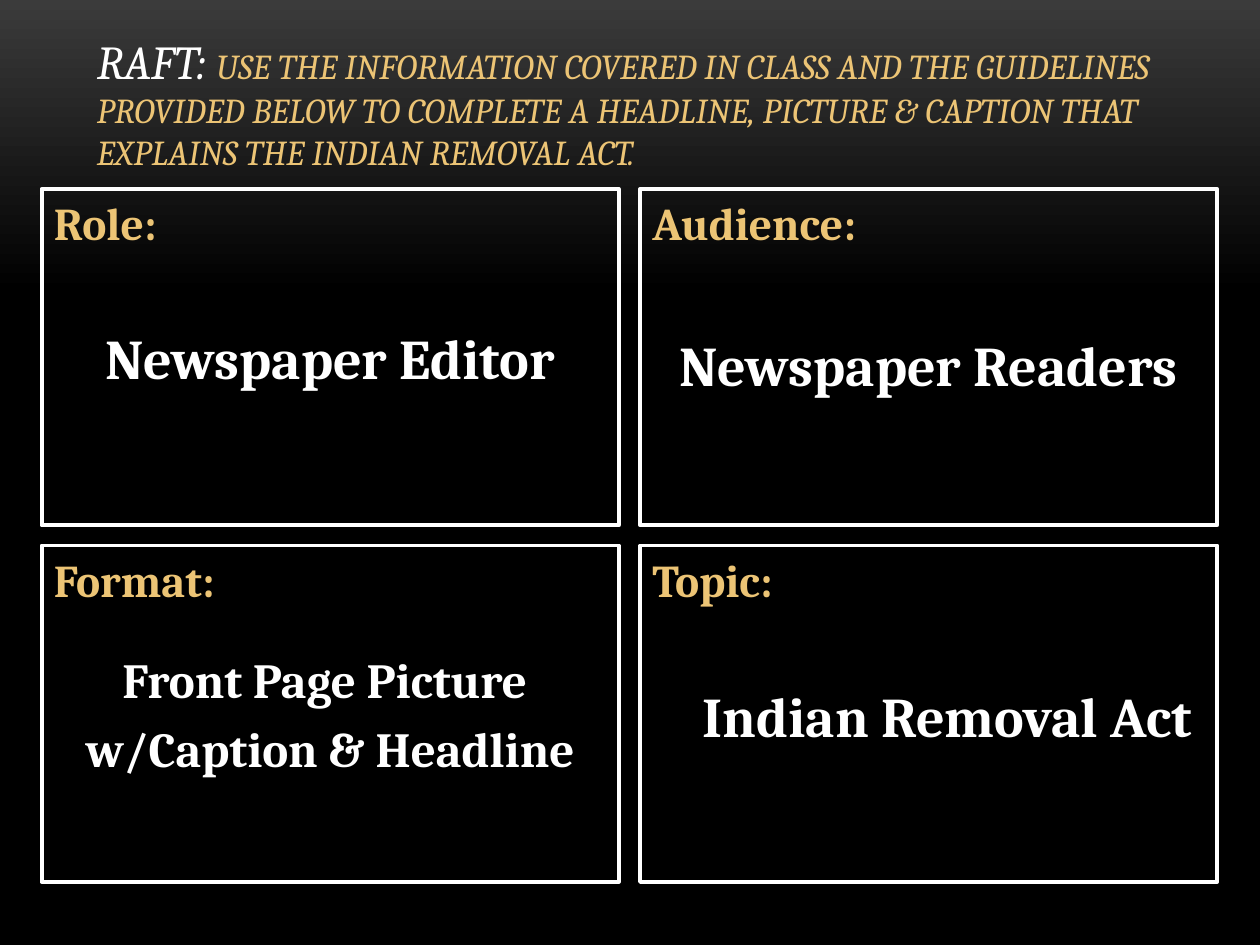
from dataclasses import dataclass

import pptx
import pptx.dml.color
import pptx.enum.shapes
import pptx.enum.text
import pptx.util

Inches = pptx.util.Inches
Pt = pptx.util.Pt
RGB = pptx.dml.color.RGBColor
Align = pptx.enum.text.PP_ALIGN
Anchor = pptx.enum.text.MSO_ANCHOR


@dataclass(frozen=True)
class Theme:
    font: str = "Cambria"
    white: RGB = RGB(0xFF, 0xFF, 0xFF)
    gold: RGB = RGB(0xEC, 0xC4, 0x75)
    gray: RGB = RGB(0x3B, 0x3B, 0x3B)
    black: RGB = RGB(0, 0, 0)
    title: float = 27
    task: float = 20
    label: float = 26
    border: float = 2.25


@dataclass(frozen=True)
class Card:
    label: str
    lines: tuple[str, ...]
    size: float
    gap: float  # points between the label and the first line
    shift: float = 0  # left margin of the lines, inches


THEME = Theme()
CARDS = (
    Card("Role:", ("Newspaper Editor",), 32, 42),
    Card("Audience:", ("Newspaper Readers",), 32, 46),
    Card("Format:", ("Front Page Picture ", "w/Caption & Headline"), 28, 24.5),
    Card("Topic:", ("Indian Removal Act",), 32, 43, 0.3),
)
LEFT, TOP = 0.33, 1.5
WIDTH, HEIGHT = 4.58, 2.67
STEP_X, STEP_Y = 4.75, 2.83


def add_run(para, text: str, size: float, color: RGB,
            bold: bool = False, italic: bool = False) -> None:
    run = para.add_run()
    run.text = text
    font = run.font
    font.name, font.size = THEME.font, Pt(size)
    font.bold, font.italic = bold, italic
    font.color.rgb = color


def paint_back(slide) -> None:
    fill = slide.background.fill
    fill.gradient()
    fill.gradient_angle = 270  # counter-clockwise: runs top to bottom
    first, last = fill.gradient_stops
    first.position, first.color.rgb = 0, THEME.gray
    last.position, last.color.rgb = 0.31, THEME.black


def add_title(slide) -> None:
    box = slide.shapes.add_textbox(
        Inches(0.67), Inches(0.17), Inches(8.67), Inches(1.25))
    frame = box.text_frame
    frame.word_wrap = True
    frame.vertical_anchor = Anchor.BOTTOM
    para = frame.paragraphs[0]
    add_run(para, "RAFT: ", THEME.title, THEME.white, italic=True)
    add_run(para, "USE THE INFORMATION COVERED IN CLASS AND THE GUIDELINES "
            "PROVIDED BELOW TO COMPLETE A HEADLINE, PICTURE & CAPTION THAT "
            "EXPLAINS THE INDIAN REMOVAL ACT.",
            THEME.task, THEME.gold, italic=True)


def add_card(slide, card: Card, left: float, top: float) -> None:
    box = slide.shapes.add_shape(
        pptx.enum.shapes.MSO_SHAPE.RECTANGLE,
        Inches(left), Inches(top), Inches(WIDTH), Inches(HEIGHT))
    box.shadow.inherit = False
    box.fill.background()
    box.line.color.rgb = THEME.white
    box.line.width = Pt(THEME.border)

    frame = box.text_frame
    frame.word_wrap = True
    frame.vertical_anchor = Anchor.TOP
    head = frame.paragraphs[0]
    head.alignment = Align.LEFT
    add_run(head, card.label, THEME.label, THEME.gold, bold=True)

    for i, text in enumerate(card.lines):
        para = frame.add_paragraph()
        para.alignment = Align.CENTER
        para.space_before = Pt(6 if i else card.gap)
        if card.shift:
            para._p.get_or_add_pPr().set("marL", str(Inches(card.shift)))
        add_run(para, text, card.size, THEME.white, bold=True)


def main() -> None:
    deck = pptx.Presentation()
    deck.slide_width, deck.slide_height = Inches(10), Inches(7.5)
    slide = deck.slides.add_slide(deck.slide_layouts[6])
    paint_back(slide)
    add_title(slide)
    # Two by two grid of cards
    for i, card in enumerate(CARDS):
        row, col = divmod(i, 2)
        add_card(slide, card, LEFT + col * STEP_X, TOP + row * STEP_Y)
    deck.save("out.pptx")


if __name__ == "__main__":
    main()
